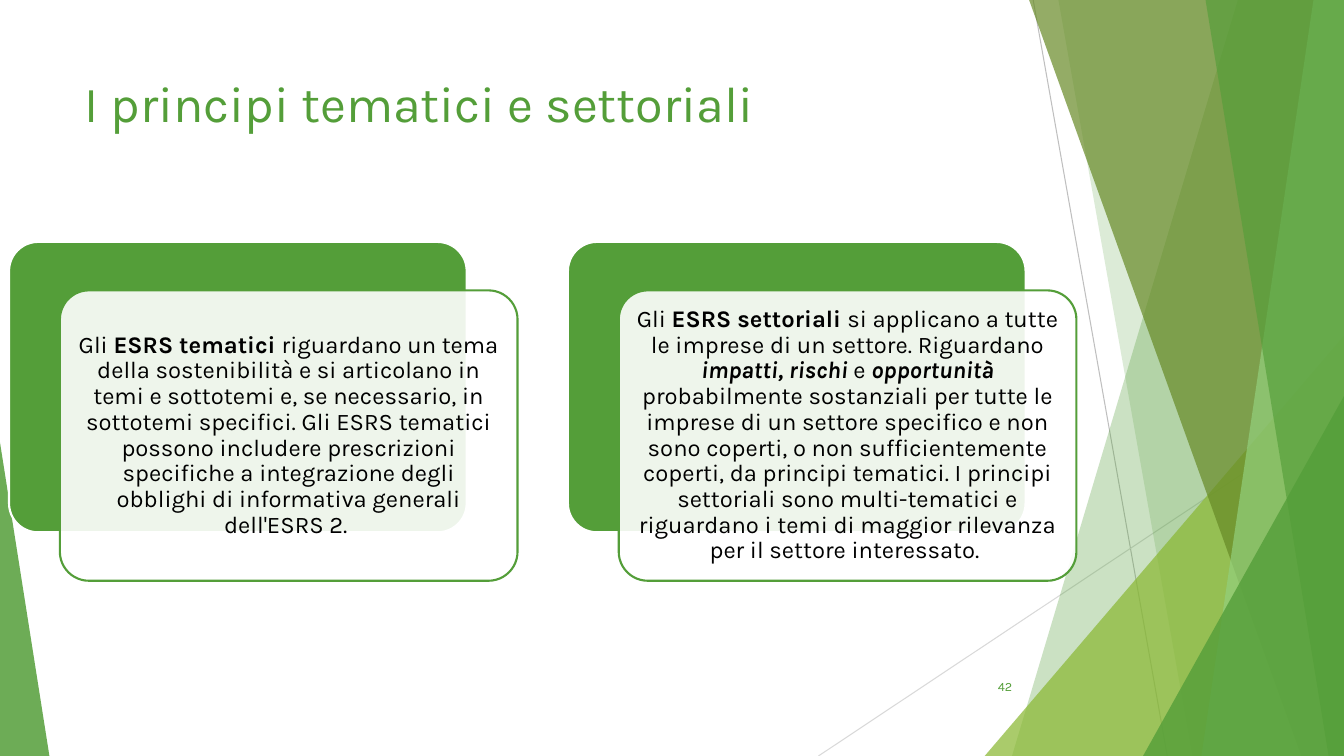
from dataclasses import dataclass

from pptx import Presentation
from pptx.dml.color import RGBColor
from pptx.enum.shapes import MSO_CONNECTOR, MSO_SHAPE
from pptx.enum.text import MSO_ANCHOR, MSO_AUTO_SIZE, PP_ALIGN
from pptx.oxml.ns import qn
from pptx.oxml.xmlchemy import OxmlElement
from pptx.shapes.autoshape import Shape
from pptx.slide import Slide
from pptx.text.text import TextFrame
from pptx.util import Pt

GREEN = RGBColor(0x54, 0x9E, 0x39)
PALE_GREEN = RGBColor(0x93, 0xD0, 0x7D)
LIME = RGBColor(0x8A, 0xB8, 0x33)
OLIVE = RGBColor(0x67, 0x8A, 0x26)
MID_GREY = RGBColor(0xBF, 0xBF, 0xBF)
LIGHT_GREY = RGBColor(0xD9, 0xD9, 0xD9)
WHITE = RGBColor(0xFF, 0xFF, 0xFF)
BLACK = RGBColor(0, 0, 0)

FONT = "Karla"
PAGE_WIDTH, PAGE_HEIGHT = 960, 540

CARD_LEFT, CARD_TOP, CARD_PITCH = 6.5, 172.8, 399.2
CARD_WIDTH, CARD_HEIGHT = 326.9, 207.4
FRONT_SHIFT_X, FRONT_SHIFT_Y = 36.3, 34.6

PLAIN = {"bold": False, "italic": False}
BOLD = {"bold": True, "italic": False}
BOLD_ITALIC = {"bold": True, "italic": True}


@dataclass
class Ray:
    """Thin background line."""
    start: tuple[float, float]
    end: tuple[float, float]
    color: RGBColor


@dataclass
class Band:
    """Full-height band that reaches the right edge of the page."""
    top_x: float
    bottom_x: float
    color: RGBColor
    opacity: int


@dataclass
class Wedge:
    """Right triangle standing on the bottom edge of the page."""
    left: float
    width: float
    height: float
    apex: float
    color: RGBColor
    opacity: int


@dataclass
class Span:
    text: str
    style: dict[str, bool]


RAYS = [
    Ray((738, 0), (833.8, 540), MID_GREY),
    Ray((960, 290.2), (584.6, 540), LIGHT_GREY),
]

# Back to front
FACETS = [
    Band(884.2, 722.9, GREEN, 30),
    Band(756, 851.8, GREEN, 20),
    Wedge(703.4, 256.6, 300.2, 1, LIME, 72),
    Band(735.1, 929.5, OLIVE, 70),
    Band(938.2, 858.2, PALE_GREEN, 70),
    Band(861.1, 949, GREEN, 65),
    Wedge(816.5, 143.5, 257, 1, GREEN, 80),
    Wedge(0, 35.3, 223.9, 0, GREEN, 85),
]

CARDS = [
    [
        Span("Gli ", PLAIN),
        Span("ESRS tematici ", BOLD),
        Span("riguardano un tema della sostenibilità e si articolano in temi e "
             "sottotemi e, se necessario, in sottotemi specifici. Gli ESRS tematici "
             "possono includere prescrizioni specifiche a integrazione degli "
             "obblighi di informativa generali dell'ESRS 2. ", PLAIN),
    ],
    [
        Span("Gli ", PLAIN),
        Span("ESRS settoriali ", BOLD),
        Span("si applicano a tutte le imprese di un settore. Riguardano ", PLAIN),
        Span("impatti, rischi ", BOLD_ITALIC),
        Span("e ", PLAIN),
        Span("opportunità ", BOLD_ITALIC),
        Span("probabilmente sostanziali per tutte le imprese di un settore specifico "
             "e non sono coperti, o non sufficientemente coperti, da principi "
             "tematici. I principi settoriali sono multi-tematici e riguardano i temi "
             "di maggior rilevanza per il settore interessato. ", PLAIN),
    ],
]


def paint(shape: Shape, color: RGBColor, opacity: int = 100,
          outline: RGBColor | None = None) -> None:
    shape.shadow.inherit = False
    shape.fill.solid()
    shape.fill.fore_color.rgb = color
    if opacity < 100:
        alpha = OxmlElement("a:alpha")
        alpha.set("val", str(opacity * 1000))
        shape.element.spPr.find(qn("a:solidFill"))[0].append(alpha)
    if outline is None:
        shape.line.fill.background()
    else:
        shape.line.color.rgb = outline
        shape.line.width = Pt(1.5)


def write(frame: TextFrame, spans: list[Span], size: float, color: RGBColor,
          align: PP_ALIGN, anchor: MSO_ANCHOR) -> None:
    frame.word_wrap = True
    frame.auto_size = MSO_AUTO_SIZE.NONE
    frame.vertical_anchor = anchor
    para = frame.paragraphs[0]
    para.alignment = align
    for span in spans:
        run = para.add_run()
        run.text = span.text
        run.font.color.rgb = color
        for name, value in {"name": FONT, "size": Pt(size), **span.style}.items():
            setattr(run.font, name, value)


def draw_ray(page: Slide, ray: Ray) -> None:
    points = [Pt(value) for value in (*ray.start, *ray.end)]
    line = page.shapes.add_connector(MSO_CONNECTOR.STRAIGHT, *points)
    line.line.color.rgb = ray.color
    line.line.width = Pt(0.75)
    line.element.spPr.append(OxmlElement("a:effectLst"))


def draw_facet(page: Slide, facet: Band | Wedge) -> None:
    if isinstance(facet, Band):
        builder = page.shapes.build_freeform(Pt(facet.top_x), 0)
        corners = [(PAGE_WIDTH, 0), (PAGE_WIDTH, PAGE_HEIGHT),
                   (facet.bottom_x, PAGE_HEIGHT)]
        builder.add_line_segments([(Pt(x), Pt(y)) for x, y in corners], close=True)
        shape = builder.convert_to_shape()
    else:
        shape = page.shapes.add_shape(
            MSO_SHAPE.ISOSCELES_TRIANGLE, Pt(facet.left),
            Pt(PAGE_HEIGHT - facet.height), Pt(facet.width), Pt(facet.height))
        shape.adjustments[0] = facet.apex
    paint(shape, facet.color, facet.opacity)


def add_panel(page: Slide, left: float, top: float) -> Shape:
    panel = page.shapes.add_shape(MSO_SHAPE.ROUNDED_RECTANGLE, Pt(left), Pt(top),
                                  Pt(CARD_WIDTH), Pt(CARD_HEIGHT))
    panel.adjustments[0] = 0.1
    return panel


def draw_card(page: Slide, left: float, spans: list[Span]) -> None:
    paint(add_panel(page, left, CARD_TOP), GREEN, outline=WHITE)
    front = add_panel(page, left + FRONT_SHIFT_X, CARD_TOP + FRONT_SHIFT_Y)
    paint(front, WHITE, 90, GREEN)
    frame = front.text_frame
    for side in ("left", "right", "top", "bottom"):
        setattr(frame, f"margin_{side}", Pt(5))
    write(frame, spans, 17, BLACK, PP_ALIGN.CENTER, MSO_ANCHOR.MIDDLE)
    frame.paragraphs[0].line_spacing = 0.9


def main() -> None:
    deck = Presentation()
    deck.slide_width, deck.slide_height = Pt(PAGE_WIDTH), Pt(PAGE_HEIGHT)
    page = deck.slides.add_slide(deck.slide_layouts[5])

    # Background facets
    for ray in RAYS:
        draw_ray(page, ray)
    for facet in FACETS:
        draw_facet(page, facet)

    # Title
    title = page.shapes.title
    place = {"left": 53.3, "top": 48, "width": 676.8, "height": 104}
    for name, value in place.items():
        setattr(title, name, Pt(value))
    write(title.text_frame, [Span("I principi tematici e settoriali", PLAIN)], 36,
          GREEN, PP_ALIGN.LEFT, MSO_ANCHOR.TOP)

    # Cards
    for index, spans in enumerate(CARDS):
        draw_card(page, CARD_LEFT + index * CARD_PITCH, spans)

    # Page number
    number = page.shapes.add_textbox(Pt(676), Pt(476), Pt(54), Pt(28.8))
    write(number.text_frame, [Span("42", PLAIN)], 9, GREEN, PP_ALIGN.RIGHT,
          MSO_ANCHOR.MIDDLE)

    deck.save("out.pptx")


if __name__ == "__main__":
    main()
